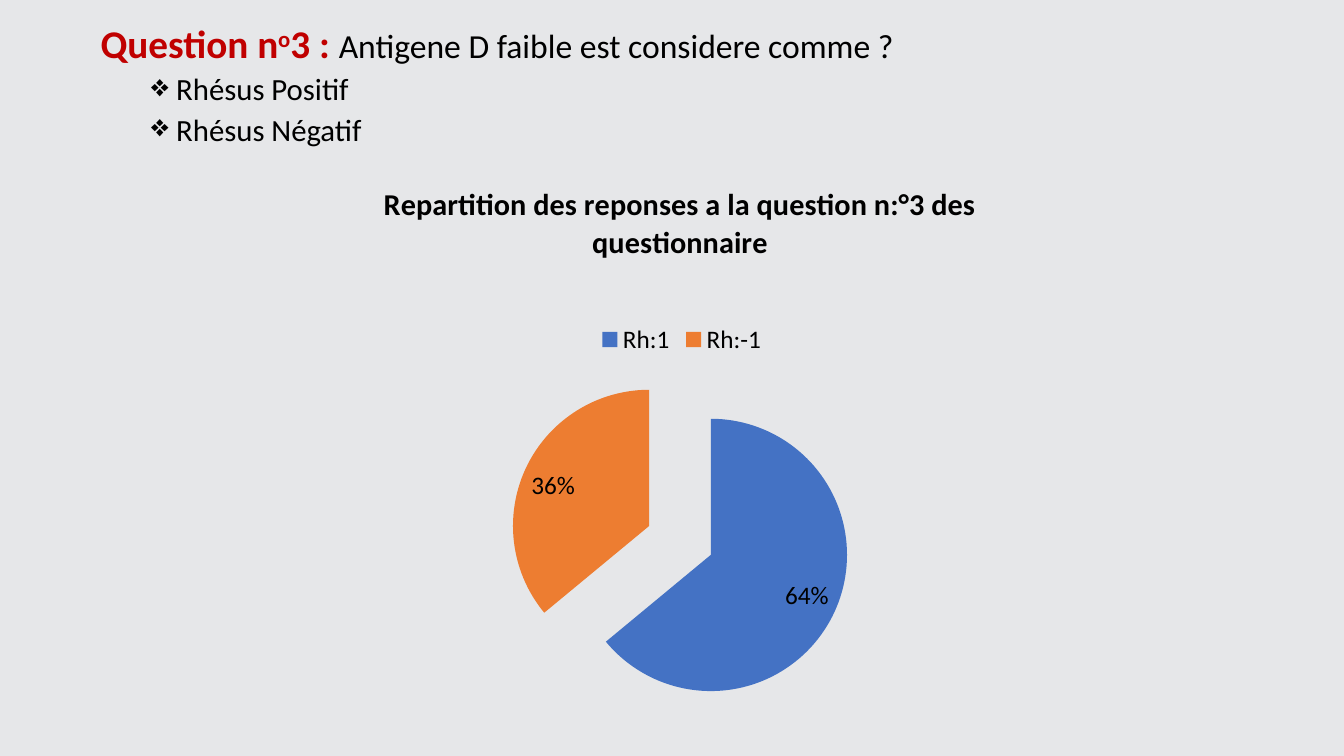
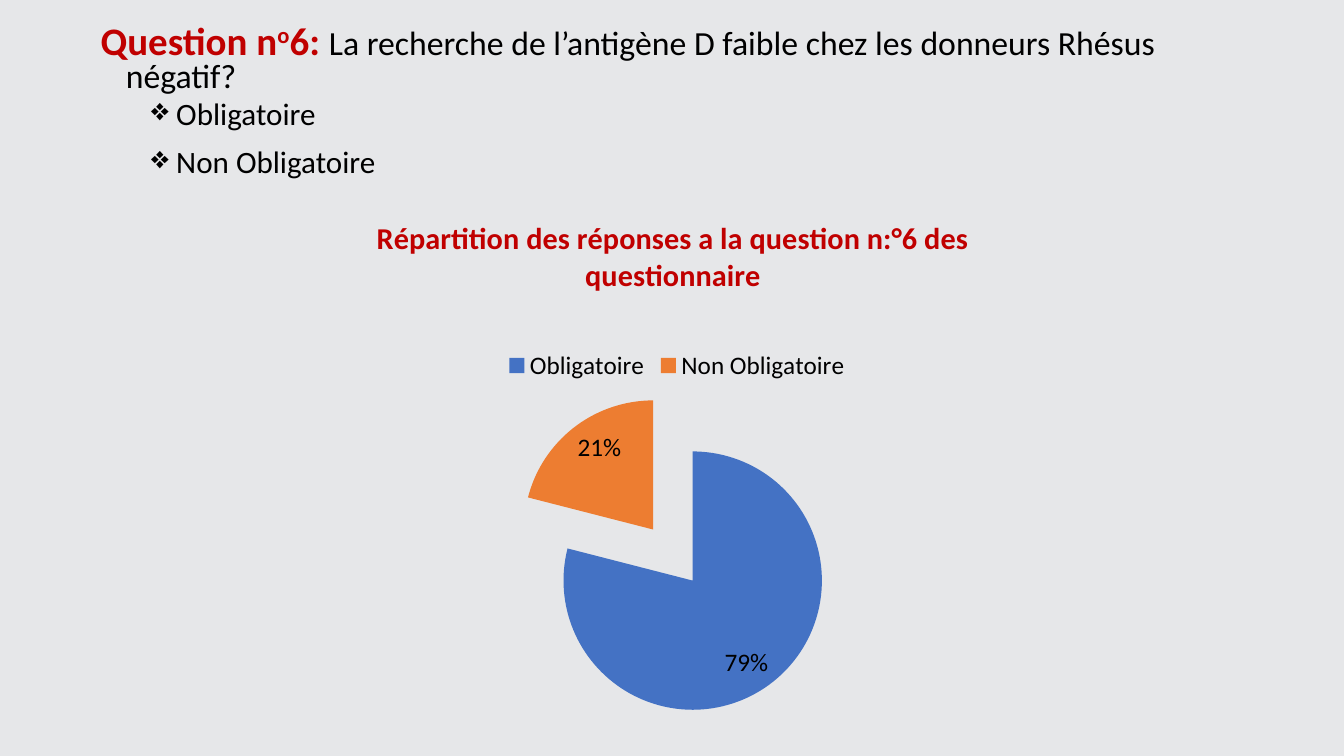
from dataclasses import dataclass

from lxml import etree
from pptx import Presentation
from pptx import util as u
from pptx.chart import data as cd
from pptx.dml.color import RGBColor
from pptx.enum import chart as ch
from pptx.oxml import ns


@dataclass(frozen=True)
class Theme:
    font: str = "Calibri"
    background: RGBColor = RGBColor(0xE6, 0xE7, 0xE9)
    ink: RGBColor = RGBColor(0, 0, 0)
    accent: RGBColor = RGBColor(0xC0, 0, 0)
    slices: tuple = (RGBColor(0x44, 0x72, 0xC4), RGBColor(0xED, 0x7D, 0x31))
    chart_title: float = 21.6
    chart_text: float = 18


@dataclass(frozen=True)
class Box:
    left: float
    top: float
    width: float
    height: float

    def lengths(self) -> tuple:
        return tuple(u.Inches(v) for v in (self.left, self.top, self.width, self.height))


@dataclass(frozen=True)
class Answer:
    text: str
    spacing: float


@dataclass(frozen=True)
class Question:
    number: str
    text: str
    answers: tuple
    text_box: Box
    spacing: float
    sizes: tuple  # heading, question, answers
    chart_title: str
    title_color: RGBColor
    chart_box: Box
    legend_left: float
    categories: tuple
    values: tuple


THEME = Theme()
EXPLOSION = 25
LEGEND_TOP = 0.28
PLOT = {"x": 0.2, "y": 0.37, "w": 0.6, "h": 0.6}

QUESTIONS = (
    Question(
        number="3 : ",
        text="Antigene D faible est considere comme ?",
        answers=(Answer("Rhésus Positif", 0.9), Answer("Rhésus Négatif", 0.9)),
        text_box=Box(0.9, 0.2, 11.5, 1.54),
        spacing=0.9,
        sizes=(28, 24, 22),
        chart_title="Repartition des reponses a la question n:°3 des questionnaire",
        title_color=THEME.ink,
        chart_box=Box(2.48, 1.59, 8.53, 5.63),
        legend_left=0.4,
        categories=("Rh:1", "Rh:-1"),
        values=(64, 36),
    ),
    Question(
        number="6: ",
        text="La recherche de l’antigène D faible chez les donneurs Rhésus négatif?",
        answers=(Answer("Obligatoire", 0.8), Answer("Non Obligatoire", 1.1)),
        text_box=Box(0.9, 0.2, 11.5, 1.65),
        spacing=0.8,
        sizes=(27.8, 24.1, 22.2),
        chart_title="Répartition des réponses a la question n:°6 des questionnaire",
        title_color=THEME.accent,
        chart_box=Box(2.41, 1.93, 8.53, 5.34),
        legend_left=0.3,
        categories=("Obligatoire", "Non Obligatoire"),
        values=(79, 21),
    ),
)


# Text
def style(font, size: float, color: RGBColor, bold: bool = False) -> None:
    font.name, font.size, font.bold = THEME.font, u.Pt(size), bold
    font.color.rgb = color


def set_paragraph(p, margin: float, spacing: float, before: float, bullet: str = "") -> None:
    p.line_spacing, p.space_before = spacing, u.Pt(before)
    pPr = p._p.get_or_add_pPr()
    pPr.set("marL", str(u.Inches(margin)))
    pPr.set("indent", str(u.Inches(-0.25)))
    if bullet:
        etree.SubElement(pPr, ns.qn("a:buChar")).set("char", bullet)


def add_question(slide, q: Question) -> None:
    tf = slide.shapes.add_textbox(*q.text_box.lengths()).text_frame
    tf.word_wrap = True
    heading, body, answer_size = q.sizes

    p = tf.paragraphs[0]
    set_paragraph(p, 0.25, q.spacing, 10)
    for text in ("Question n", "o", q.number):
        r = p.add_run()
        r.text = text
        style(r.font, heading, THEME.accent, True)
        if text == "o":
            r._r.get_or_add_rPr().set("baseline", "30000")
    r = p.add_run()
    r.text = q.text
    style(r.font, body, THEME.ink)

    for answer in q.answers:
        p = tf.add_paragraph()
        p.text = answer.text
        p.level = 1
        set_paragraph(p, 0.75, answer.spacing, 5, "❖")
        style(p.runs[0].font, answer_size, THEME.ink)


# Chart
def set_layout(parent, index: int, **fractions: float) -> None:
    """Place a chart part by fractions of the chart area."""
    for old in parent.findall(ns.qn("c:layout")):
        parent.remove(old)
    layout = etree.Element(ns.qn("c:layout"))
    manual = etree.SubElement(layout, ns.qn("c:manualLayout"))
    if "w" in fractions:
        etree.SubElement(manual, ns.qn("c:layoutTarget")).set("val", "inner")
    for key in ("x", "y"):
        etree.SubElement(manual, ns.qn(f"c:{key}Mode")).set("val", "edge")
    for key, value in fractions.items():
        etree.SubElement(manual, ns.qn(f"c:{key}")).set("val", str(value))
    parent.insert(index, layout)


def add_pie(slide, q: Question) -> None:
    data = cd.CategoryChartData()
    data.categories = q.categories
    data.add_series(q.chart_title, q.values)
    chart = slide.shapes.add_chart(
        ch.XL_CHART_TYPE.PIE, *q.chart_box.lengths(), data).chart
    style(chart.font, THEME.chart_text, THEME.ink)

    # Title and legend
    chart.has_title = True
    tf = chart.chart_title.text_frame
    tf.text = q.chart_title
    style(tf.paragraphs[0].runs[0].font, THEME.chart_title, q.title_color, True)
    chart.has_legend = True
    legend = chart.legend
    legend.position = ch.XL_LEGEND_POSITION.TOP
    legend.include_in_layout = False
    style(legend.font, THEME.chart_text, THEME.ink)
    set_layout(legend._element, 1, x=q.legend_left, y=LEGEND_TOP)

    # Slices
    plot = chart.plots[0]
    plot.vary_by_categories = True
    set_layout(chart._chartSpace.chart.plotArea, 0, **PLOT)
    series = plot.series[0]
    for i, color in enumerate(THEME.slices):
        fill = series.points[i].format.fill
        fill.solid()
        fill.fore_color.rgb = color
    explosion = etree.Element(ns.qn("c:explosion"))
    explosion.set("val", str(EXPLOSION))
    series._element.find(ns.qn("c:dPt")).addprevious(explosion)

    # Labels
    plot.has_data_labels = True
    labels = plot.data_labels
    labels.show_percentage, labels.show_value = True, False
    labels.number_format, labels.number_format_is_linked = "0%", False
    labels.position = ch.XL_LABEL_POSITION.INSIDE_END
    style(labels.font, THEME.chart_text, THEME.ink)


def main() -> None:
    prs = Presentation()
    prs.slide_width, prs.slide_height = u.Inches(13.33), u.Inches(7.5)
    for q in QUESTIONS:
        slide = prs.slides.add_slide(prs.slide_layouts[6])
        slide.background.fill.solid()
        slide.background.fill.fore_color.rgb = THEME.background
        add_question(slide, q)
        add_pie(slide, q)
    prs.save("out.pptx")


if __name__ == "__main__":
    main()
